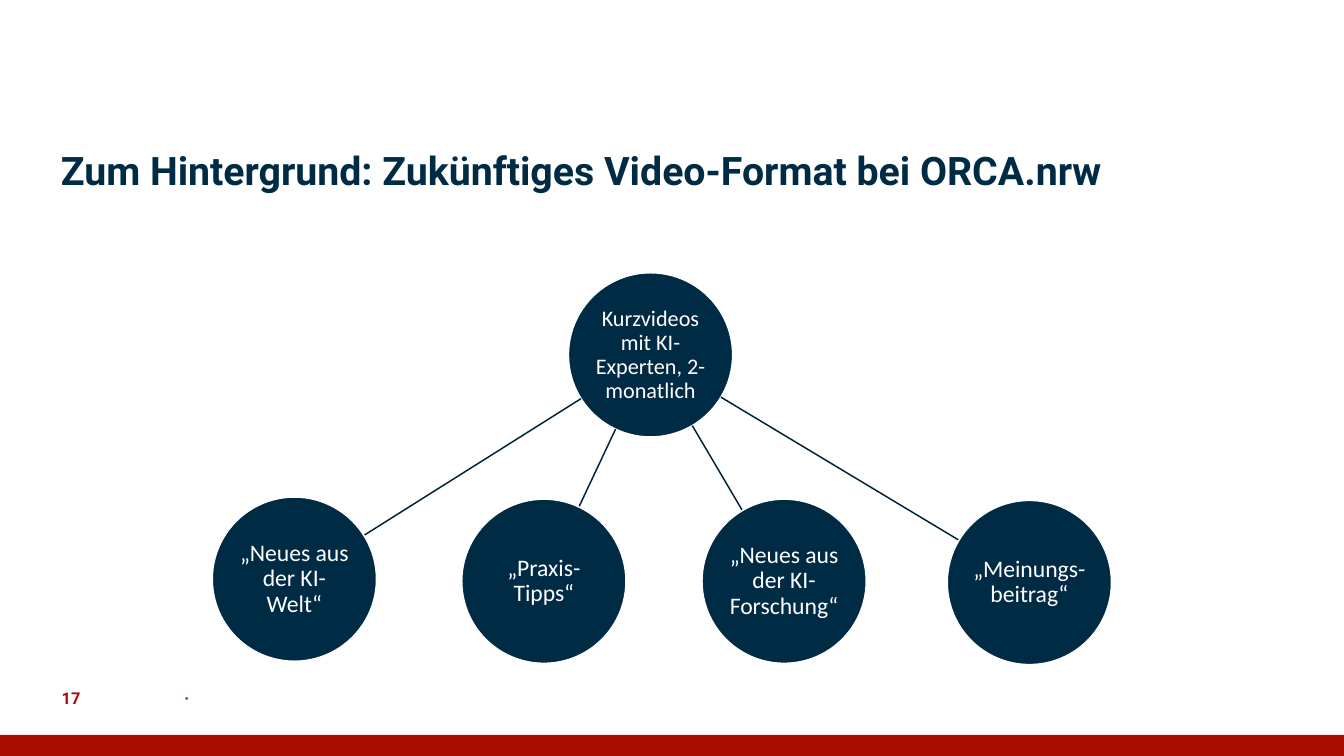
import math

from lxml import etree
from pptx import Presentation
from pptx.dml.color import RGBColor
from pptx.enum.shapes import MSO_CONNECTOR, MSO_SHAPE
from pptx.enum.text import MSO_ANCHOR, PP_ALIGN
from pptx.oxml.ns import qn
from pptx.util import Cm, Pt

NAVY = RGBColor(0x00, 0x2B, 0x44)
DARK_NAVY = RGBColor(0x00, 0x22, 0x36)
RED = RGBColor(0xA8, 0x0D, 0x00)
WHITE = RGBColor(0xFF, 0xFF, 0xFF)

OVAL, BAR = MSO_SHAPE.OVAL, MSO_SHAPE.RECTANGLE
STRAIGHT = MSO_CONNECTOR.STRAIGHT
MIDDLE = MSO_ANCHOR.MIDDLE
LEFT, CENTER = PP_ALIGN.LEFT, PP_ALIGN.CENTER

SLIDE_WIDTH, SLIDE_HEIGHT = 32, 18
DIAMETER = 3.91

TITLE_FONT = {"name": "Roboto", "size": Pt(26.5), "bold": True}
FOOTER_FONT = {"name": "Roboto", "size": Pt(11), "bold": True}
HUB_FONT = {"name": "Calibri", "size": Pt(15)}
TOPIC_FONT = {"name": "Calibri", "size": Pt(16)}

# Circle centres in cm, relative to the diagram box
HUB = ("Kurzvideos mit KI-Experten, 2-monatlich", 10.44, 1.95)
TOPICS = [
    ("„Neues aus der KI-Welt“", 1.96, 7.29),
    ("„Praxis-Tipps“", 7.9, 7.34),
    ("„Neues aus der KI-Forschung“", 13.62, 7.34),
    ("„Meinungs-beitrag“", 19.46, 7.37),
]


def write(shape, text, font, color, align=LEFT, inset=0.0, spacing=1.0):
    frame = shape.text_frame
    margins = dict.fromkeys(
        ("margin_left", "margin_top", "margin_right", "margin_bottom"), Cm(inset))
    for key, value in {"word_wrap": True, "vertical_anchor": MIDDLE, **margins}.items():
        setattr(frame, key, value)
    paragraph = frame.paragraphs[0]
    paragraph.alignment = align
    paragraph.line_spacing = spacing
    run = paragraph.add_run()
    run.text = text
    for key, value in font.items():
        setattr(run.font, key, value)
    run.font.color.rgb = color


def add_label(slide, box, text, font, color, spacing=1.0):
    label = slide.shapes.add_textbox(*map(Cm, box))
    write(label, text, font, color, spacing=spacing)


def add_circle(slide, center, text, font):
    x, y = center
    radius = DIAMETER / 2
    circle = slide.shapes.add_shape(
        OVAL, Cm(x - radius), Cm(y - radius), Cm(DIAMETER), Cm(DIAMETER))
    circle.shadow.inherit = False
    circle.fill.solid()
    circle.fill.fore_color.rgb = NAVY
    circle.line.color.rgb = WHITE
    circle.line.width = Pt(1)
    write(circle, text, font, WHITE, CENTER, inset=0.03, spacing=0.9)


def add_spoke(slide, start, end):
    """Join two circles from rim to rim along the line between their centres."""
    (x1, y1), (x2, y2) = start, end
    share = DIAMETER / 2 / math.dist(start, end)
    dx, dy = (x2 - x1) * share, (y2 - y1) * share
    spoke = slide.shapes.add_connector(
        STRAIGHT, Cm(x1 + dx), Cm(y1 + dy), Cm(x2 - dx), Cm(y2 - dy))
    spoke.line.color.rgb = DARK_NAVY
    spoke.line.width = Pt(1)
    etree.SubElement(spoke._element.spPr, qn("a:effectLst"))


def add_diagram(slide, left, top):
    hub_text, hub_x, hub_y = HUB
    hub_center = (left + hub_x, top + hub_y)
    add_circle(slide, hub_center, hub_text, HUB_FONT)
    for topic, x, y in TOPICS:
        topic_center = (left + x, top + y)
        add_spoke(slide, hub_center, topic_center)
        add_circle(slide, topic_center, topic, TOPIC_FONT)


def add_footer(slide, left, top, width, height):
    bar_height = 0.5
    bar = slide.shapes.add_shape(
        BAR, Cm(left), Cm(top + height - bar_height), Cm(width), Cm(bar_height))
    bar.shadow.inherit = False
    bar.fill.solid()
    bar.fill.fore_color.rgb = RED
    bar.line.fill.background()
    for text, offset in (("17", 1.47), ("·", 4.39)):
        add_label(slide, (left + offset, top, 0.94, 0.97), text, FOOTER_FONT, RED)


def main():
    presentation = Presentation()
    presentation.slide_width = Cm(SLIDE_WIDTH)
    presentation.slide_height = Cm(SLIDE_HEIGHT)
    slide = presentation.slides.add_slide(presentation.slide_layouts[6])
    add_footer(slide, 0, 16.13, SLIDE_WIDTH, SLIDE_HEIGHT - 16.13)
    add_label(slide, (1.45, 3.5, 27.6, 1.22),
              "Zum Hintergrund: Zukünftiges Video-Format bei ORCA.nrw",
              TITLE_FONT, NAVY, spacing=0.9)
    add_diagram(slide, 5.05, 6.5)
    presentation.save("out.pptx")


if __name__ == "__main__":
    main()
